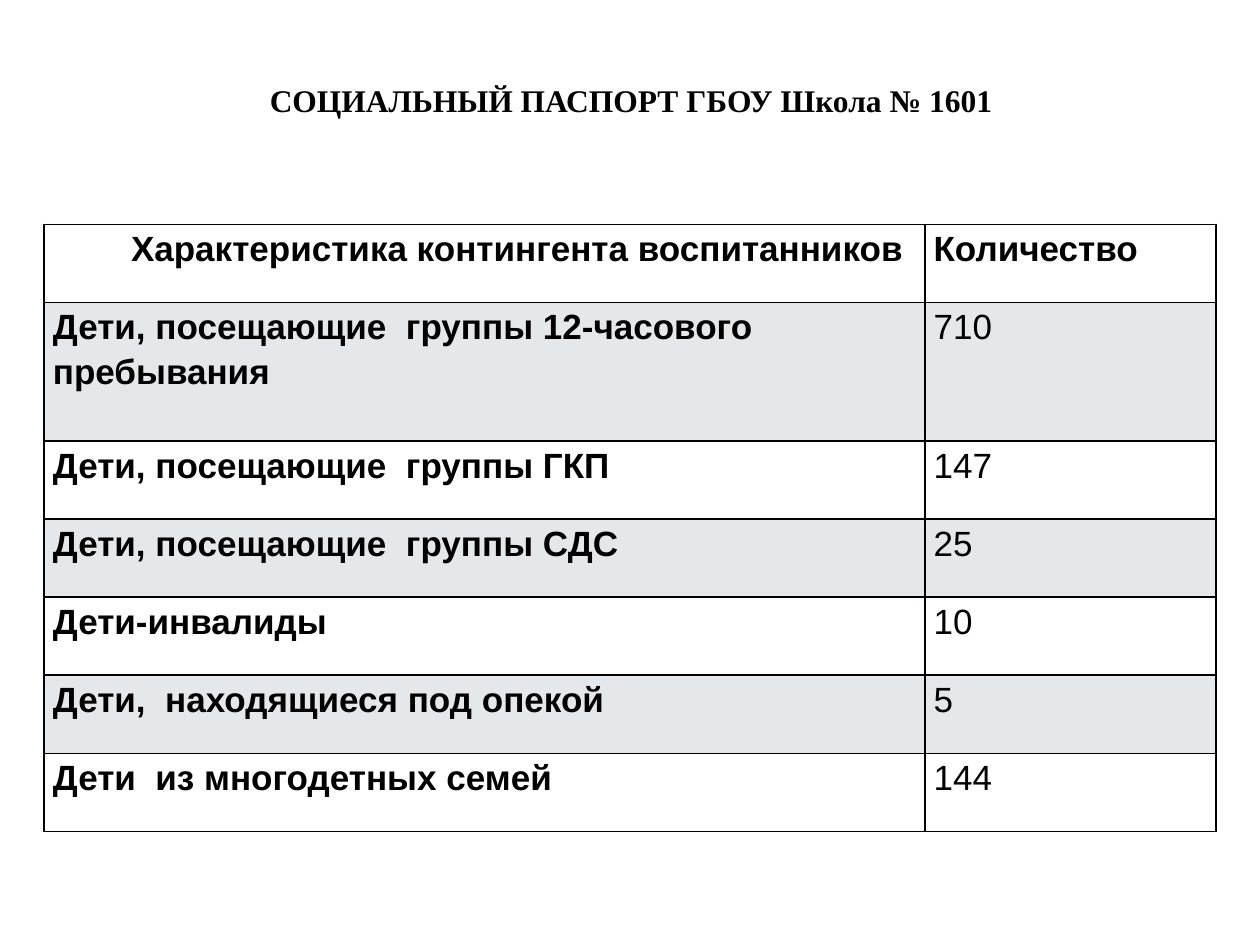
from dataclasses import dataclass
from typing import NamedTuple

from lxml.etree import SubElement
from pptx import Presentation
from pptx.dml.color import RGBColor
from pptx.enum.text import MSO_ANCHOR as Anchor, PP_ALIGN as Align
from pptx.oxml.ns import qn
from pptx.util import Inches, Pt


@dataclass(frozen=True)
class Theme:
    """Colours, fonts and sizes of the slide."""
    ink: str = "000000"
    paper: str = "FFFFFF"
    band: str = "78909C"
    band_alpha: int = 20
    title_font: str = "Times New Roman"
    body_font: str = "Arial"
    title_size: int = 18
    body_size: int = 20
    border: int = 1


class Group(NamedTuple):
    """One table row: a group of children and its count."""
    label: str
    count: str
    lines: int = 1


THEME = Theme()
WIDTH, HEIGHT = Inches(10), Inches(7.5)
ROW_HEIGHT, EXTRA_LINE = 0.62, 0.48
COLUMN_SHARES = 0.699, 0.231
HEADER_INDENT = 0.62
HEADER = Group("Характеристика контингента воспитанников", "Количество")
GROUPS = [
    Group("Дети, посещающие  группы 12-часового пребывания", "710", 2),
    Group("Дети, посещающие  группы ГКП", "147"),
    Group("Дети, посещающие  группы СДС", "25"),
    Group("Дети-инвалиды", "10"),
    Group("Дети,  находящиеся под опекой", "5"),
    Group("Дети  из многодетных семей", "144"),
]


def write(frame, text: str, *, font: str, size: int, bold: bool,
          align=Align.LEFT, spacing: float = 1.0, indent: float = 0) -> None:
    """Put one formatted paragraph into a text frame."""
    paragraph = frame.paragraphs[0]
    paragraph.alignment, paragraph.line_spacing = align, spacing
    if indent:
        paragraph._p.get_or_add_pPr().set("indent", str(Inches(indent)))
    run = paragraph.add_run()
    run.text = text
    run.font.name, run.font.size, run.font.bold = font, Pt(size), bold
    run.font.color.rgb = RGBColor.from_string(THEME.ink)


def outline(cell) -> None:
    """Draw a thin border on all four sides of a cell."""
    properties = cell._tc.get_or_add_tcPr()
    for side in "LRTB":
        line = SubElement(properties, qn(f"a:ln{side}"), w=str(Pt(THEME.border)))
        SubElement(SubElement(line, qn("a:solidFill")), qn("a:srgbClr"), val=THEME.ink)


def shade(cell, banded: bool) -> None:
    """Fill a cell with paper or with the translucent band colour."""
    cell.fill.solid()
    cell.fill.fore_color.rgb = RGBColor.from_string(THEME.band if banded else THEME.paper)
    if banded:
        color = next(cell._tc.tcPr.find(qn("a:solidFill")).iter(qn("a:srgbClr")))
        SubElement(color, qn("a:alpha"), val=str(THEME.band_alpha * 1000))


def add_title(slide, text: str) -> None:
    """Place and format the title placeholder."""
    title = slide.shapes.title
    title.left, title.top = int(WIDTH * 0.051), int(HEIGHT * 0.048)
    title.width, title.height = int(WIDTH * 0.9), int(HEIGHT * 0.084)
    title.text_frame.vertical_anchor = Anchor.BOTTOM
    write(title.text_frame, text, font=THEME.title_font, size=THEME.title_size,
          bold=True, align=Align.CENTER)


def add_groups(slide, groups: list[Group]) -> None:
    """Draw the table with a header and banded group rows."""
    rows = [HEADER, *groups]
    heights = [Inches(ROW_HEIGHT + EXTRA_LINE * (row.lines - 1)) for row in rows]
    widths = [int(WIDTH * share) for share in COLUMN_SHARES]
    table = slide.shapes.add_table(
        len(rows), len(widths), int(WIDTH * 0.035), Inches(1.78),
        sum(widths), sum(heights)).table
    table.first_row = table.horz_banding = False
    for column, width in zip(table.columns, widths):
        column.width = width
    for r, (group, height) in enumerate(zip(rows, heights)):
        table.rows[r].height = height
        is_header = group is HEADER
        for c, text in enumerate((group.label, group.count)):
            cell = table.cell(r, c)
            cell.margin_left = cell.margin_right = Inches(0.07)
            cell.margin_top = cell.margin_bottom = 0
            outline(cell)
            shade(cell, r % 2 == 1)
            write(cell.text_frame, text, font=THEME.body_font, size=THEME.body_size,
                  bold=is_header or c == 0, spacing=1.15,
                  indent=HEADER_INDENT if is_header and c == 0 else 0)


def main() -> None:
    """Build and save the slide."""
    deck = Presentation()
    deck.slide_width, deck.slide_height = WIDTH, HEIGHT
    slide = deck.slides.add_slide(deck.slide_layouts[5])
    add_title(slide, "СОЦИАЛЬНЫЙ ПАСПОРТ ГБОУ Школа № 1601")
    add_groups(slide, GROUPS)
    deck.save("out.pptx")


if __name__ == "__main__":
    main()
